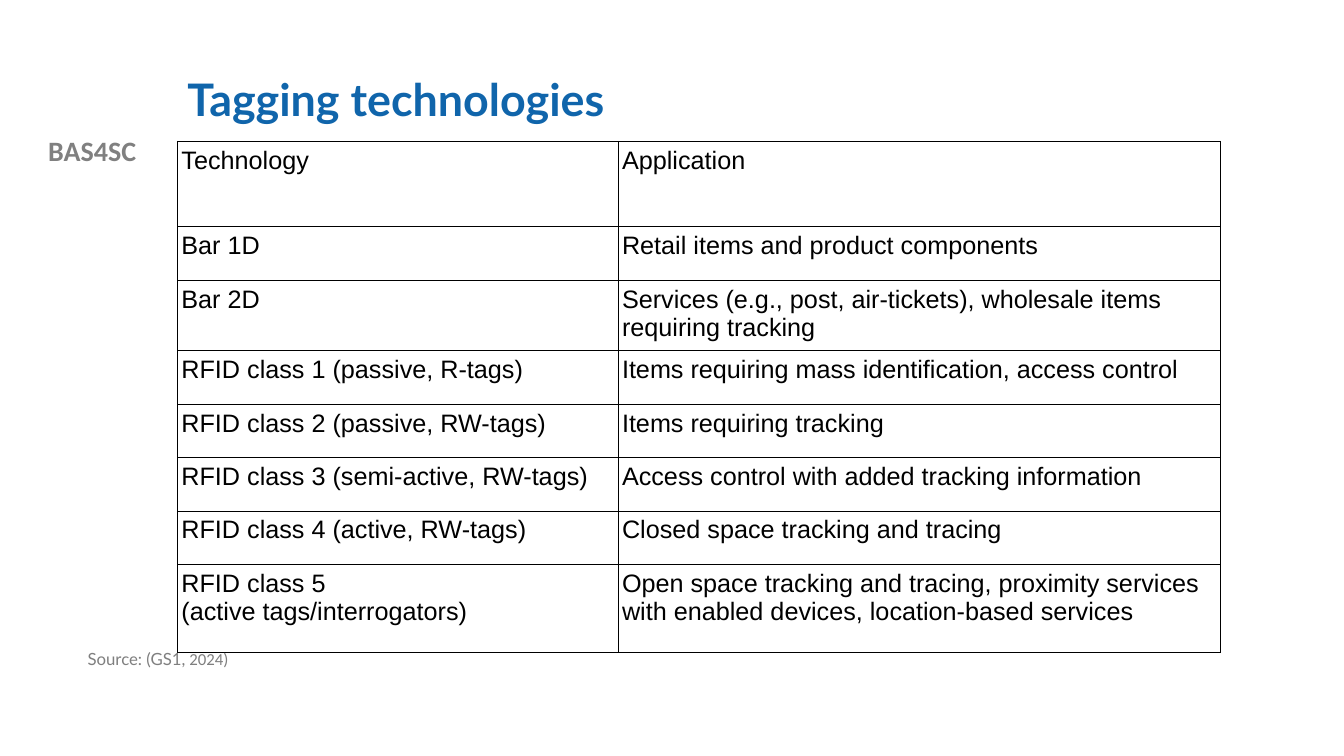
from lxml import etree
from pptx import Presentation
from pptx.dml.color import RGBColor
from pptx.enum.text import MSO_ANCHOR, PP_ALIGN
from pptx.oxml.ns import qn
from pptx.util import Inches, Pt

TOP, MIDDLE = MSO_ANCHOR.TOP, MSO_ANCHOR.MIDDLE
LEFT, CENTER = PP_ALIGN.LEFT, PP_ALIGN.CENTER
COLORS = {"title": "1065AB", "label": "808080", "source": "7F7F7F", "ink": "000000"}
TITLE = {"name": "Lato", "size": Pt(32), "bold": True, "color": "title"}
LABEL = {"name": "Calibri", "size": Pt(20), "bold": True, "color": "label"}
SOURCE = {"name": "Lato", "size": Pt(12), "color": "source"}
BODY = {"name": "Arial", "size": Pt(18), "color": "ink"}
BORDER_WIDTH = Pt(0.57)
COL_WIDTHS = [4.37, 5.97]
ROW_HEIGHTS = [0.85] + [0.53] * 6 + [0.87]
ROWS = [
    ("Technology", "Application"),
    ("Bar 1D", "Retail items and product components"),
    ("Bar 2D", "Services (e.g., post, air-tickets), wholesale items requiring tracking"),
    ("RFID class 1 (passive, R-tags)", "Items requiring mass identification, access control"),
    ("RFID class 2 (passive, RW-tags)", "Items requiring tracking"),
    ("RFID class 3 (semi-active, RW-tags)", "Access control with added tracking information"),
    ("RFID class 4 (active, RW-tags)", "Closed space tracking and tracing"),
    ("RFID class 5\n(active tags/interrogators)",
     "Open space tracking and tracing, proximity services with enabled devices, "
     "location-based services"),
]


class SlideBuilder:
    """Adds styled text and tables to one slide."""

    def __init__(self, s):
        self.s = s

    def run(self, p, text, style):
        r = p.add_run()
        r.text = text
        for key, value in style.items():
            if key == "color":
                r.font.color.rgb = RGBColor.from_string(COLORS[value])
            else:
                setattr(r.font, key, value)

    def text(self, box, runs, anchor=TOP, align=LEFT, spacing=0.9):
        tf = self.s.shapes.add_textbox(*map(Inches, box)).text_frame
        tf.word_wrap = True
        tf.vertical_anchor = anchor
        p = tf.paragraphs[0]
        p.alignment, p.line_spacing = align, spacing
        for text, style in runs:
            self.run(p, text, style)

    def border(self, cell):
        tcPr = cell._tc.get_or_add_tcPr()
        for i, side in enumerate(("a:lnL", "a:lnR", "a:lnT", "a:lnB")):
            ln = etree.Element(qn(side), w=str(int(BORDER_WIDTH)))
            fill = etree.SubElement(ln, qn("a:solidFill"))
            etree.SubElement(fill, qn("a:srgbClr"), val=COLORS["ink"])
            tcPr.insert(i, ln)

    def cell(self, cell, text):
        cell.fill.background()
        cell.margin_left = cell.margin_right = Inches(0.04)
        cell.margin_top = cell.margin_bottom = Inches(0.05)
        self.border(cell)
        p = cell.text_frame.paragraphs[0]
        for i, line in enumerate(text.split("\n")):
            if i:
                p.add_line_break()
            self.run(p, line, BODY)

    def table(self, left, top, widths, heights, rows):
        box = map(Inches, (left, top, sum(widths), sum(heights)))
        table = self.s.shapes.add_table(len(heights), len(widths), *box).table
        table.first_row = table.horz_banding = False
        for col, width in zip(table.columns, widths):
            col.width = Inches(width)
        for row, height, texts in zip(table.rows, heights, rows):
            row.height = Inches(height)
            for cell, text in zip(row.cells, texts):
                self.cell(cell, text)


def main():
    prs = Presentation()
    prs.slide_width, prs.slide_height = Inches(13.33), Inches(7.5)
    slide = SlideBuilder(prs.slides.add_slide(prs.slide_layouts[6]))
    slide.text((0, 1.28, 1.83, 0.43), [("BAS4SC", LABEL)], align=CENTER, spacing=1.0)
    slide.text((1.76, 0.4, 10.66, 1.22), [("Tagging technologies", TITLE)], anchor=MIDDLE)
    slide.table(1.76, 1.4, COL_WIDTHS, ROW_HEIGHTS, ROWS)
    slide.text((0.77, 6.41, 5.01, 0.52),
               [("Source: (GS1,", SOURCE), (" 2024)", {**SOURCE, "name": "Calibri"})])
    prs.save("out.pptx")


if __name__ == "__main__":
    main()
